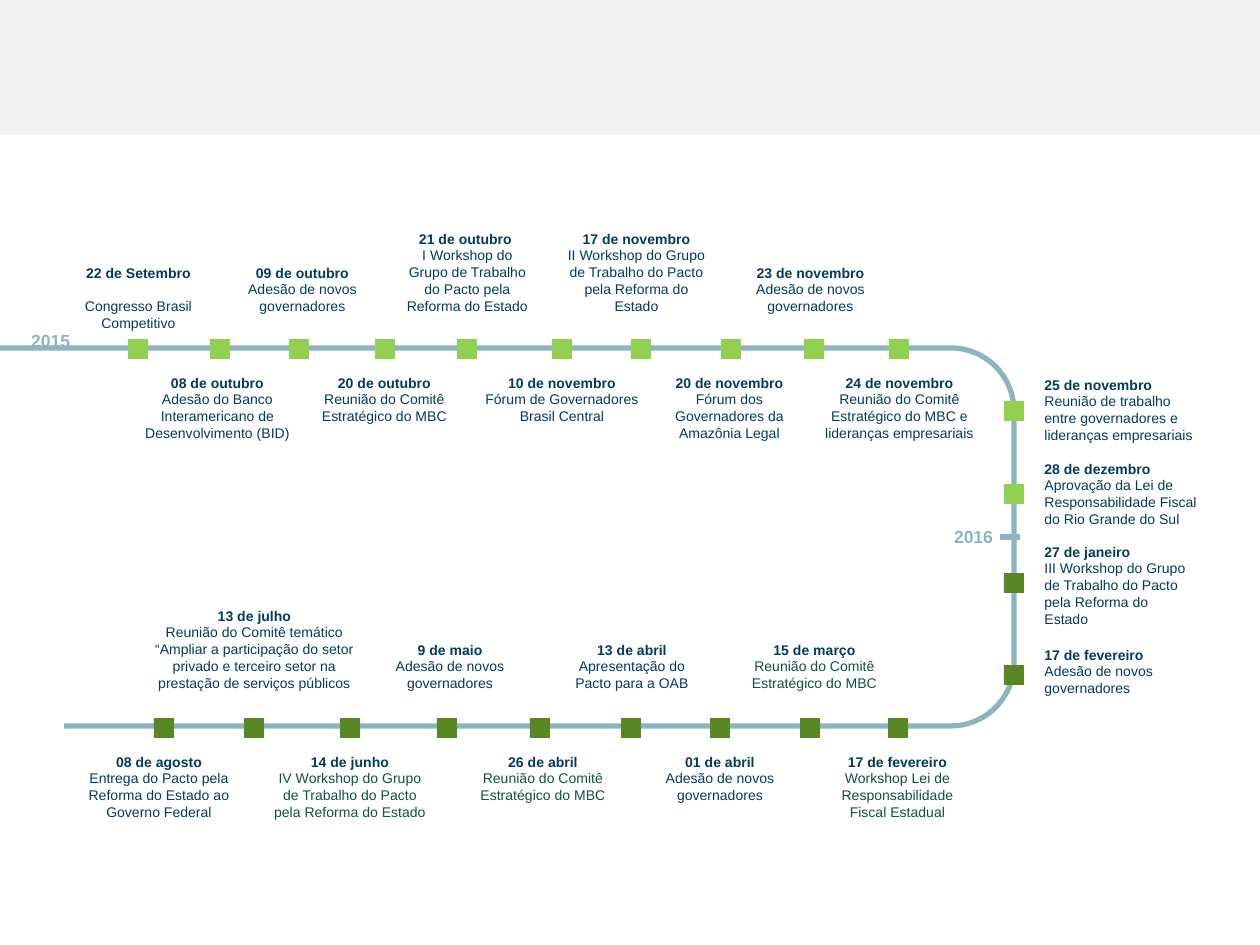
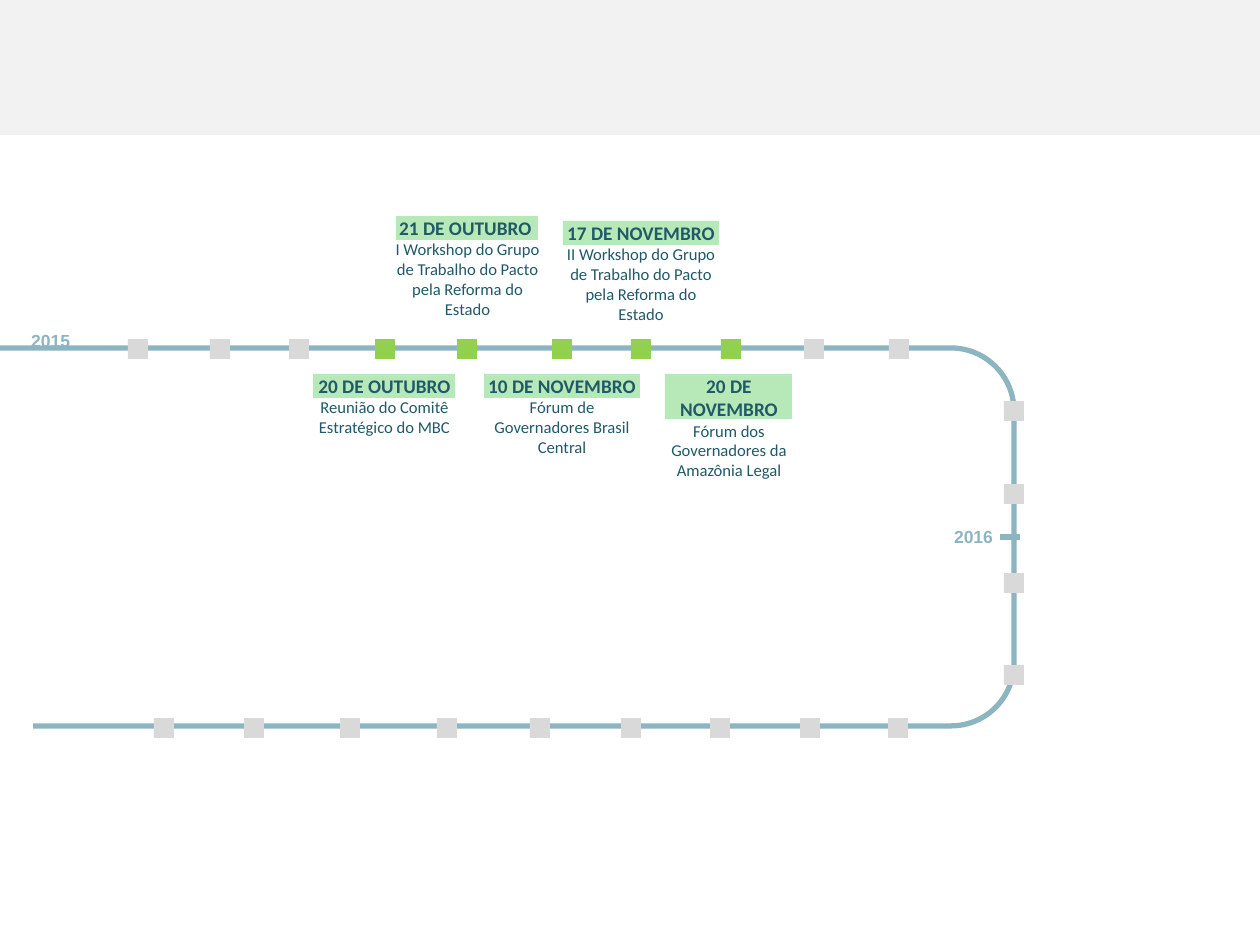
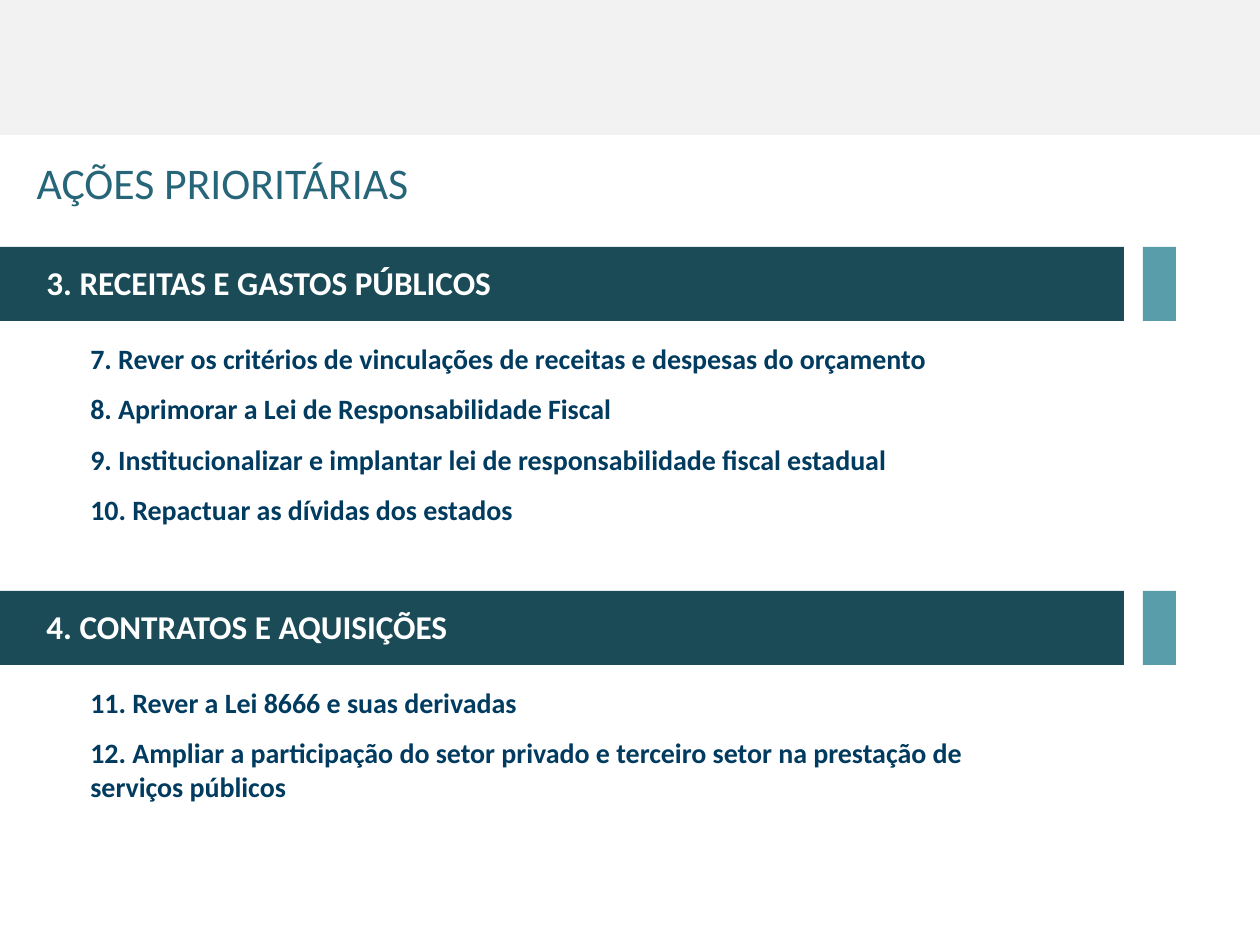
from pptx import Presentation
from pptx.dml.color import RGBColor
from pptx.enum.shapes import MSO_SHAPE
from pptx.enum.text import MSO_ANCHOR, MSO_AUTO_SIZE, PP_ALIGN
from pptx.util import Emu, Pt

RECT = MSO_SHAPE.RECTANGLE
ROUND = MSO_SHAPE.ROUNDED_RECTANGLE
LEFT, MID = PP_ALIGN.LEFT, PP_ALIGN.CENTER
TOP = MSO_ANCHOR.TOP
GROW, FIXED = MSO_AUTO_SIZE.SHAPE_TO_FIT_TEXT, MSO_AUTO_SIZE.NONE

SCALE = 914400 / 126
WIDE, HIGH = 1260, 945
WHITE, BAND, TRACK = "FFFFFF", "F2F2F2", "8DB5C1"
LIME, MOSS, GREY, MINT = "92D050", "588824", "D9D9D9", "B7E9B8"
NAVY, PINE, TEAL = "013B5F", "0E5245", "215968"
BAR, CHIP, TITLE = "1C4B58", "5A9DAA", "266678"

MARK = 20
ROW_ONE, ROW_TWO, SIDE = 339, 718, 1004
FIRST = [128, 210, 289, 375, 457, 552, 631, 721, 804, 889]
TURN = [401, 484, 573, 665]
LAST = [154, 244, 340, 437, 530, 621, 710, 800, 888]

JOIN = "Adesão de novos governadores"
BOARD = "Reunião do Comitê Estratégico do MBC"
SHOP = "Workshop do Grupo de Trabalho do Pacto pela Reforma do Estado"
CENTRAL = "Fórum de Governadores Brasil Central"
AMAZON = "Fórum dos Governadores da Amazônia Legal"

OVER_ONE = [
    (72, 133, 3, "22 de Setembro", "Congresso Brasil Competitivo", NAVY, 9.6),
    (232, 141, 3, "09 de outubro", JOIN),
    (393, 149, 5, "21 de outubro ", "I " + SHOP),
    (552, 169, 5, "17 de novembro", "II " + SHOP),
    (736, 149, 3, "23 de novembro", JOIN),
]
UNDER_ONE = [
    (132, 171, 4, "08 de outubro", "Adesão do Banco Interamericano de Desenvolvimento (BID)"),
    (302, 165, 3, "20 de outubro", BOARD),
    (470, 184, 3, "10 de novembro", CENTRAL),
    (661, 137, 4, "20 de novembro", AMAZON),
    (809, 181, 4, "24 de novembro", BOARD + " e lideranças empresariais"),
]
OVER_TWO = [
    (141, 227, 5, "13 de julho", "Reunião do Comitê temático “Ampliar a participação do setor "
     "privado e terceiro setor na prestação de serviços públicos"),
    (379, 142, 3, "9 de maio", JOIN),
    (548, 168, 3, "13 de abril", "Apresentação do Pacto para a OAB"),
    (730, 169, 3, "15 de março", BOARD, PINE),
]
UNDER_TWO = [
    (74, 170, 4, "08 de agosto", "Entrega do Pacto pela Reforma do Estado ao Governo Federal"),
    (260, 180, 4, "14 de junho", "IV " + SHOP, PINE),
    (459, 168, 3, "26 de abril", BOARD, PINE),
    (646, 148, 3, "01 de abril", JOIN),
    (825, 145, 4, "17 de fevereiro", "Workshop Lei de Responsabilidade Fiscal Estadual", PINE),
]
BESIDE = [
    (370, 181, 4, "25 de novembro", "Reunião de trabalho entre governadores e lideranças empresariais"),
    (454, 181, 4, "28 de dezembro", "Aprovação da Lei de Responsabilidade Fiscal do Rio Grande do Sul"),
    (537, 173, 5, "27 de janeiro", "III " + SHOP),
    (640, 181, 3, "17 de fevereiro", JOIN),
]
TAGGED = [
    ((302, 368, 165, 77), (142, 24), "20 DE OUTUBRO", BOARD),
    ((383, 210, 169, 117), (142, 24), "21 DE OUTUBRO ", "I " + SHOP),
    ((470, 368, 184, 97), (156, 24), "10 DE NOVEMBRO", CENTRAL),
    ((551, 215, 180, 117), (156, 24), "17 DE NOVEMBRO", "II " + SHOP),
    ((646, 368, 166, 120), (127, 45), "20 DE NOVEMBRO", AMAZON),
]
INCOME = [
    "7. Rever os critérios de vinculações de receitas e despesas do orçamento",
    "8. Aprimorar a Lei de Responsabilidade Fiscal",
    "9. Institucionalizar e implantar lei de responsabilidade fiscal estadual",
    "10. Repactuar as dívidas dos estados",
]
DEALS = [
    "11. Rever a Lei 8666 e suas derivadas",
    "12. Ampliar a participação do setor privado e terceiro setor na prestação de serviços públicos",
]


def px(*nums):
    """Turn pixel lengths into EMU."""
    return [Emu(round(n * SCALE)) for n in nums]


def rgb(code):
    """Turn a hex string into a colour."""
    return RGBColor.from_string(code)


def block(slide, box, fill=None, line=None, kind=RECT):
    """Add a flat shape with an optional fill and outline."""
    shape = slide.shapes.add_shape(kind, *px(*box))
    shape.shadow.inherit = False
    if fill:
        shape.fill.solid()
        shape.fill.fore_color.rgb = rgb(fill)
    else:
        shape.fill.background()
    if line:
        shape.line.color.rgb = rgb(line)
        shape.line.width = Pt(3)
    else:
        shape.line.fill.background()
    return shape


def write(frame, lines, font="Arial", size=8, tone=NAVY, bold=False, align=MID, gap=0):
    """Fill a frame with lines, each a (text, changes to the format) pair."""
    for num, (text, change) in enumerate(lines):
        look = {"size": size, "tone": tone, "bold": bold, "gap": gap, **change}
        para = frame.paragraphs[0] if num == 0 else frame.add_paragraph()
        para.alignment = align
        if num and look["gap"]:
            para.space_before = Pt(look["gap"])
        run = para.add_run()
        run.text = text
        run.font.name = font
        run.font.size = Pt(look["size"])
        run.font.bold = look["bold"]
        run.font.color.rgb = rgb(look["tone"])


def label(slide, box, lines, **look):
    """Add a wrapping text box."""
    frame = slide.shapes.add_textbox(*px(*box)).text_frame
    frame.word_wrap = True
    frame.auto_size = GROW
    write(frame, lines, **look)


def note(slide, box, head, body, tone=NAVY, gap=0, align=MID):
    """Add a bold date with its event below."""
    label(slide, box, [(head, {"bold": True}), (body, {"tone": tone, "gap": gap})], align=align)


def tall(count):
    """Give the height of a note with so many lines."""
    return 13 + 17 * count


def row(slide, notes, top=None, base=None):
    """Lay notes along a row that hangs from top or stands on base."""
    for left, width, count, *rest in notes:
        high = tall(count)
        note(slide, (left, base - high if top is None else top, width, high), *rest)


def track(slide, start, early, late, lit=()):
    """Draw the timeline with its marks and years; lit marks are lime."""
    block(slide, (-74, 348, 1088, 378), line=TRACK, kind=ROUND)
    block(slide, (0, 711, start, 30), WHITE)
    spots = [(x, ROW_ONE, LIME if x in lit else early) for x in FIRST]
    spots += [(SIDE, y, early if num < 2 else late) for num, y in enumerate(TURN)]
    spots += [(x, ROW_TWO, late) for x in LAST]
    for left, top, fill in spots:
        block(slide, (left, top, MARK, MARK), fill)
    block(slide, (1000, 534, 20, 6), TRACK)
    for left, top, year in [(939, 520, "2016"), (16, 324, "2015")]:
        label(slide, (left, top, 69, 34), [(year, {})], size=10, tone=TRACK, bold=True)


def full(slide):
    """Build the timeline with every event."""
    track(slide, 64, LIME, MOSS)
    row(slide, OVER_ONE, base=322)
    row(slide, UNDER_ONE, top=368)
    row(slide, OVER_TWO, base=699)
    row(slide, UNDER_TWO, top=747)
    for top, width, count, head, body in BESIDE:
        note(slide, (1032, top, width, tall(count)), head, body, align=LEFT)


def focus(slide):
    """Build the timeline that brings out the tagged events."""
    track(slide, 33, GREY, GREY, FIRST[3:8])
    for box, (wide, high), head, body in TAGGED:
        left, top, width, _ = box
        block(slide, (left + (width - wide) // 2, top + 6, wide, high), MINT)
        label(slide, box, [(head, {"size": 11, "bold": True}), (body, {})],
              font="Calibri", size=9.5, tone=TEAL)


def part(slide, top, head, items, high):
    """Add a heading bar with its list of actions."""
    block(slide, (0, top, 1124, 74), BAR)
    block(slide, (1143, top, 33, 74), CHIP)
    look = {"font": "Calibri", "bold": True, "align": LEFT}
    label(slide, (34, top + 9, 1055, 53), [(head, {})], size=19, tone=WHITE, **look)
    label(slide, (78, top + 88, 908, high), [(item, {}) for item in items],
          size=16, gap=9.7, **look)


def plan(slide):
    """Build the list of priority actions."""
    title = slide.shapes.title
    title.left, title.top, title.width, title.height = px(24, 149, 1178, 66)
    frame = title.text_frame
    frame.vertical_anchor = TOP
    frame.auto_size = FIXED
    write(frame, [("AÇÕES PRIORITÁRIAS", {})], font="Calibri", size=25, tone=TITLE, align=LEFT)
    part(slide, 247, "3. RECEITAS E GASTOS PÚBLICOS", INCOME, 233)
    part(slide, 591, "4. CONTRATOS E AQUISIÇÕES", DEALS, 136)


def main():
    """Build and save the deck."""
    deck = Presentation()
    deck.slide_width, deck.slide_height = px(WIDE, HIGH)
    only, blank = deck.slide_layouts[5], deck.slide_layouts[6]
    slides = [deck.slides.add_slide(kind) for kind in (blank, blank, only)]
    band = block(slides[0], (0, 0, WIDE, 135), BAND)
    deck.slide_master.shapes._spTree.insert(2, band._element)
    for build, slide in zip((full, focus, plan), slides):
        build(slide)
    deck.save("out.pptx")


if __name__ == "__main__":
    main()
